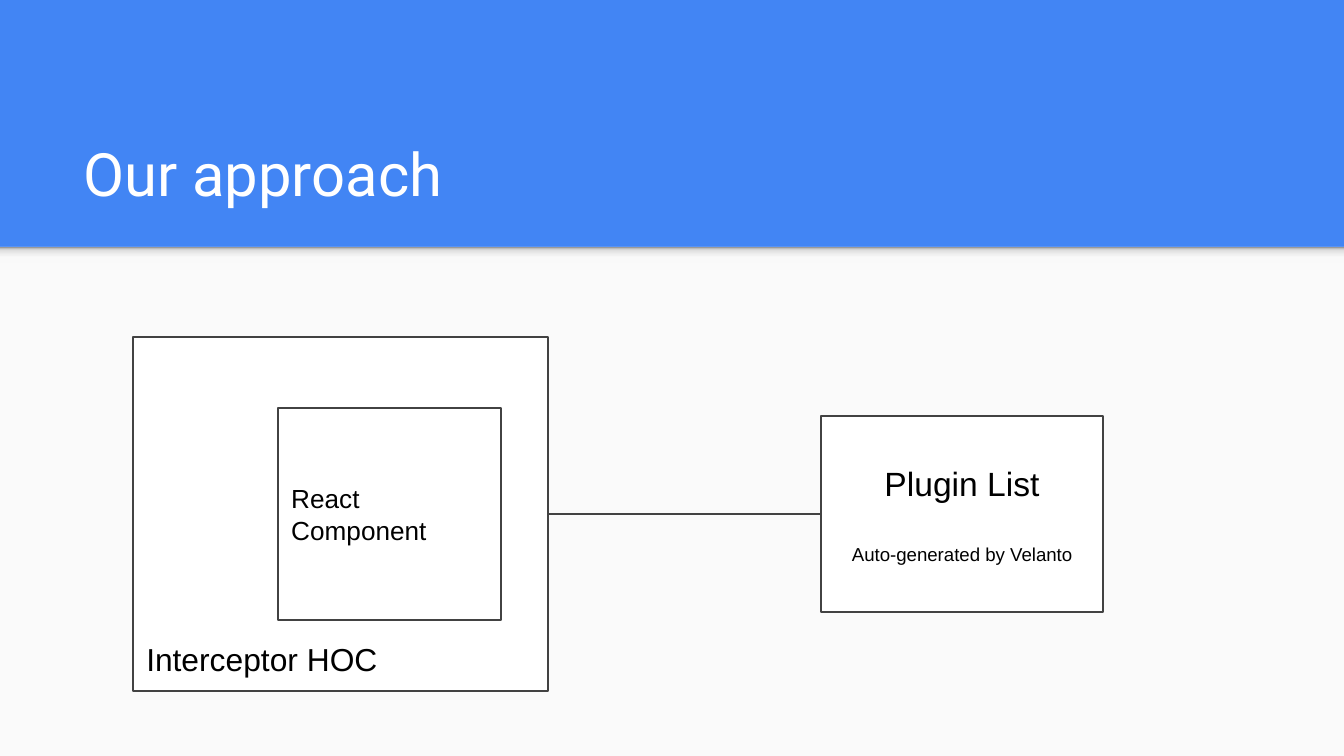
import pptx
import pptx.util
import pptx.dml.color
import pptx.enum.shapes
import pptx.enum.text
import pptx.oxml.ns
import lxml.etree

PX = 914400 / 134.4
COLORS = {
    "blue": "4285F4", "paper": "FAFAFA", "white": "FFFFFF",
    "line": "424242", "text": "000000",
}
SHADOW_STOPS = [(0, "F9F9F9"), (36, "F9F9F9"), (80, "DEDEDE"), (100, "999999")]
TITLE = ("Our approach", (70, 109, 1208, 113))
BOXES = {
    "interceptor": {"area": (133, 337, 415, 354), "anchor": "BOTTOM", "align": "LEFT",
                    "lines": [("Interceptor HOC", 17, 0)]},
    "component": {"area": (278, 408, 223, 212), "anchor": "MIDDLE", "align": "LEFT",
                  "lines": [("React Component", 14, 0)]},
    "plugins": {"area": (821, 416, 282, 196), "anchor": "MIDDLE", "align": "CENTER",
                "lines": [("Plugin List", 18, 0), ("Auto-generated by Velanto", 10, 21)]},
}
LINK = ("interceptor", 3, "plugins", 1)


def emu(*lengths):
    return [pptx.util.Emu(round(length * PX)) for length in lengths]


def color(name):
    return pptx.dml.color.RGBColor.from_string(COLORS[name])


def add_rectangle(page, area, fill):
    box = page.shapes.add_shape(pptx.enum.shapes.MSO_SHAPE.RECTANGLE, *emu(*area))
    box.shadow.inherit = False
    box.fill.solid()
    box.fill.fore_color.rgb = color(fill)
    box.line.fill.background()
    return box


def style_line(line):
    line.color.rgb = color("line")
    line.width = pptx.util.Pt(0.75)


def write(box, lines, font, ink, anchor, align):
    frame = box.text_frame
    frame.word_wrap = True
    frame.auto_size = pptx.enum.text.MSO_AUTO_SIZE.NONE
    frame.vertical_anchor = getattr(pptx.enum.text.MSO_ANCHOR, anchor)
    for side in ("left", "top", "right", "bottom"):
        setattr(frame, "margin_" + side, pptx.util.Inches(0.1))
    for index, (text, size, gap) in enumerate(lines):
        para = frame.add_paragraph() if index else frame.paragraphs[0]
        para.text = text
        para.alignment = getattr(pptx.enum.text.PP_ALIGN, align)
        para.space_before = pptx.util.Pt(gap)
        para.font.name = font
        para.font.size = pptx.util.Pt(size)
        para.font.color.rgb = color(ink)


def add_header_shadow(page):
    band = add_rectangle(page, (0, 247, 1344, 16), "paper")
    band.fill.gradient()
    band.fill.gradient_angle = 90
    qn = pptx.oxml.ns.qn
    stops = band.element.spPr.find(".//" + qn("a:gsLst"))
    for stop in list(stops):
        stops.remove(stop)
    for percent, shade in SHADOW_STOPS:
        stop = lxml.etree.SubElement(stops, qn("a:gs"), pos=str(percent * 1000))
        lxml.etree.SubElement(stop, qn("a:srgbClr"), val=shade)


def add_link(page, start, start_side, end, end_side):
    link = page.shapes.add_connector(pptx.enum.shapes.MSO_CONNECTOR.STRAIGHT, 0, 0, 0, 0)
    link.begin_connect(start, start_side)
    link.end_connect(end, end_side)
    style_line(link.line)
    lxml.etree.SubElement(link.element.spPr, pptx.oxml.ns.qn("a:effectLst"))


def main():
    deck = pptx.Presentation()
    deck.slide_width, deck.slide_height = emu(1344, 756)
    page = deck.slides.add_slide(deck.slide_layouts[5])
    page.background.fill.solid()
    page.background.fill.fore_color.rgb = color("blue")

    add_rectangle(page, (0, 247, 1344, 509), "paper")
    add_header_shadow(page)

    text, area = TITLE
    title = page.shapes.title
    title.left, title.top, title.width, title.height = emu(*area)
    write(title, [(text, 32, 0)], "Roboto", "white", "BOTTOM", "LEFT")

    drawn = {}
    for name, item in BOXES.items():
        box = add_rectangle(page, item["area"], "white")
        style_line(box.line)
        write(box, item["lines"], "Arial", "text", item["anchor"], item["align"])
        drawn[name] = box

    start, start_side, end, end_side = LINK
    add_link(page, drawn[start], start_side, drawn[end], end_side)
    deck.save("out.pptx")


if __name__ == "__main__":
    main()
